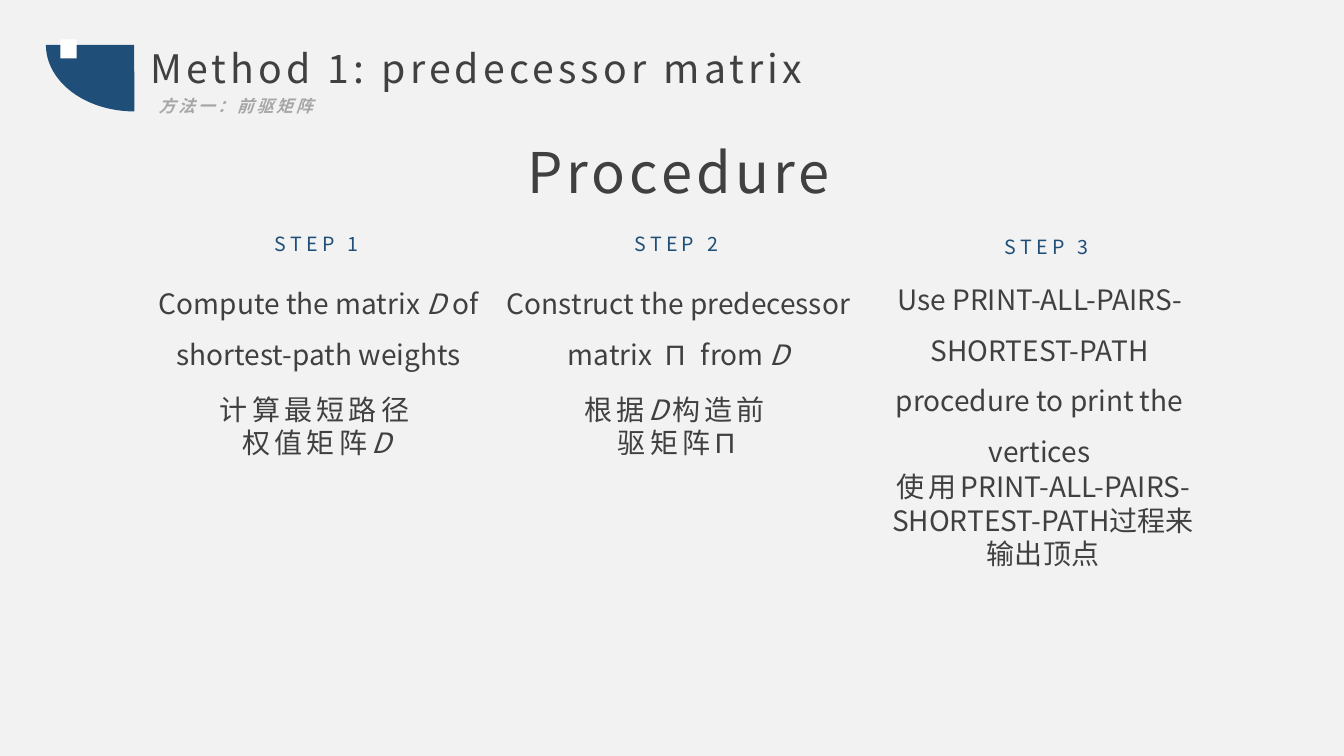
from dataclasses import dataclass

from lxml import etree
from pptx import Presentation
from pptx.dml.color import RGBColor
from pptx.enum import shapes, text
from pptx.oxml import ns
from pptx.util import Inches, Pt


@dataclass(frozen=True)
class Theme:
    back: str = "F2F2F2"
    ink: str = "404040"
    blue: str = "1F4E79"
    grey: str = "A6A6A6"
    white: str = "FFFFFF"
    font: str = "Noto Sans CJK SC"
    symbol_font: str = "Arial"
    heading: int = 40
    title: int = 28
    body: int = 20
    label: int = 14
    subtitle: int = 12


T = Theme()


def write(s, box, runs, size, color=T.ink, center=True, line=1.0, bold=None):
    """Place a text shape and fill it; a run is (text, tracking, italic, font)."""
    s.left, s.top, s.width, s.height = map(Inches, box)
    tf = s.text_frame
    tf.word_wrap = True
    tf.auto_size = text.MSO_AUTO_SIZE.SHAPE_TO_FIT_TEXT
    tf.vertical_anchor = text.MSO_ANCHOR.TOP
    p = tf.paragraphs[0]
    p.alignment = text.PP_ALIGN.CENTER if center else text.PP_ALIGN.LEFT
    p.line_spacing = line
    for words, tracking, italic, font in runs:
        r = p.add_run()
        r.text = words
        r.font.size, r.font.name = Pt(size), font
        r.font.bold, r.font.italic = bold, italic
        r.font.color.rgb = RGBColor.from_string(color)
        rPr = r.font._element
        rPr.set("spc", str(tracking * 100))
        etree.SubElement(rPr, ns.qn("a:ea")).set("typeface", T.font)


def run(words, tracking=0, italic=False, font=T.font):
    return words, tracking, italic, font


prs = Presentation()
prs.slide_width, prs.slide_height = Inches(13.33), Inches(7.5)
slide = prs.slides.add_slide(prs.slide_layouts[5])
slide.background.fill.solid()
slide.background.fill.fore_color.rgb = RGBColor.from_string(T.back)

# Corner ornament: a quarter ellipse with a small square
for kind, box, color in (
    (shapes.MSO_SHAPE.PIE, (0.67, -0.43, 1.32, 1.75), T.blue),
    (shapes.MSO_SHAPE.RECTANGLE, (0.6, 0.39, 0.16, 0.19), T.white),
):
    sp = slide.shapes.add_shape(kind, *map(Inches, box))
    sp.shadow.inherit = False
    sp.fill.solid()
    sp.fill.fore_color.rgb = RGBColor.from_string(color)
    sp.line.fill.background()
    if kind == shapes.MSO_SHAPE.PIE:
        sp.rotation = 270
        sp.adjustments[0], sp.adjustments[1] = 107.8, 162

# Title, subtitle and heading
write(slide.shapes.title, (1.39, 0.39, 7.61, 0.57),
      [run("Method 1: predecessor matrix", 3)], T.title, center=False)
write(slide.shapes.add_textbox(0, 0, 0, 0), (1.41, 0.8, 3.2, 0.37),
      [run(" 方法一：前驱矩阵", 2, True)], T.subtitle, T.grey,
      center=False, line=1.5, bold=True)
write(slide.shapes.add_textbox(0, 0, 0, 0), (5.13, 1.32, 7.39, 0.77),
      [run("Procedure", 3)], T.heading, center=False)

# Steps: label box, English box and runs, Chinese box and runs
steps = [
    ((2.21, 2.25, 1.86, 0.34),
     (1.3, 2.63, 3.72, 1.05),
     [run("Compute the matrix "), run("D", italic=True),
      run(" of shortest-path weights")],
     (2.07, 3.84, 2.14, 0.77),
     [run("计算最短路径权值矩阵", 3), run("D", 3, True)]),
    ((5.78, 2.25, 1.86, 0.34),
     (4.87, 2.63, 3.72, 1.05),
     [run("Construct the predecessor matrix  "),
      run("Π  ", font=T.symbol_font), run("from "), run("D", italic=True)],
     (5.64, 3.84, 2.14, 0.77),
     [run("根据", 3), run("D", 3, True), run("构造前驱矩阵", 3),
      run("Π", font=T.symbol_font)]),
    ((9.45, 2.28, 1.86, 0.34),
     (8.62, 2.59, 3.38, 2.06),
     [run("Use PRINT-ALL-PAIRS-SHORTEST-PATH procedure to print the vertices")],
     (8.69, 4.61, 3.31, 1.11),
     [run("使用", 3), run("PRINT-ALL-PAIRS-SHORTEST-PATH过程来输出顶点")]),
]
for number, (label_box, english_box, english, chinese_box, chinese) in enumerate(steps, 1):
    for box, runs, size, color, line in (
        (label_box, [run(f"STEP {number}", 3)], T.label, T.blue, 1.0),
        (english_box, english, T.body, T.ink, 1.5),
        (chinese_box, chinese, T.body, T.ink, 1.0),
    ):
        write(slide.shapes.add_textbox(0, 0, 0, 0), box, runs, size, color, line=line)

prs.save("out.pptx")
